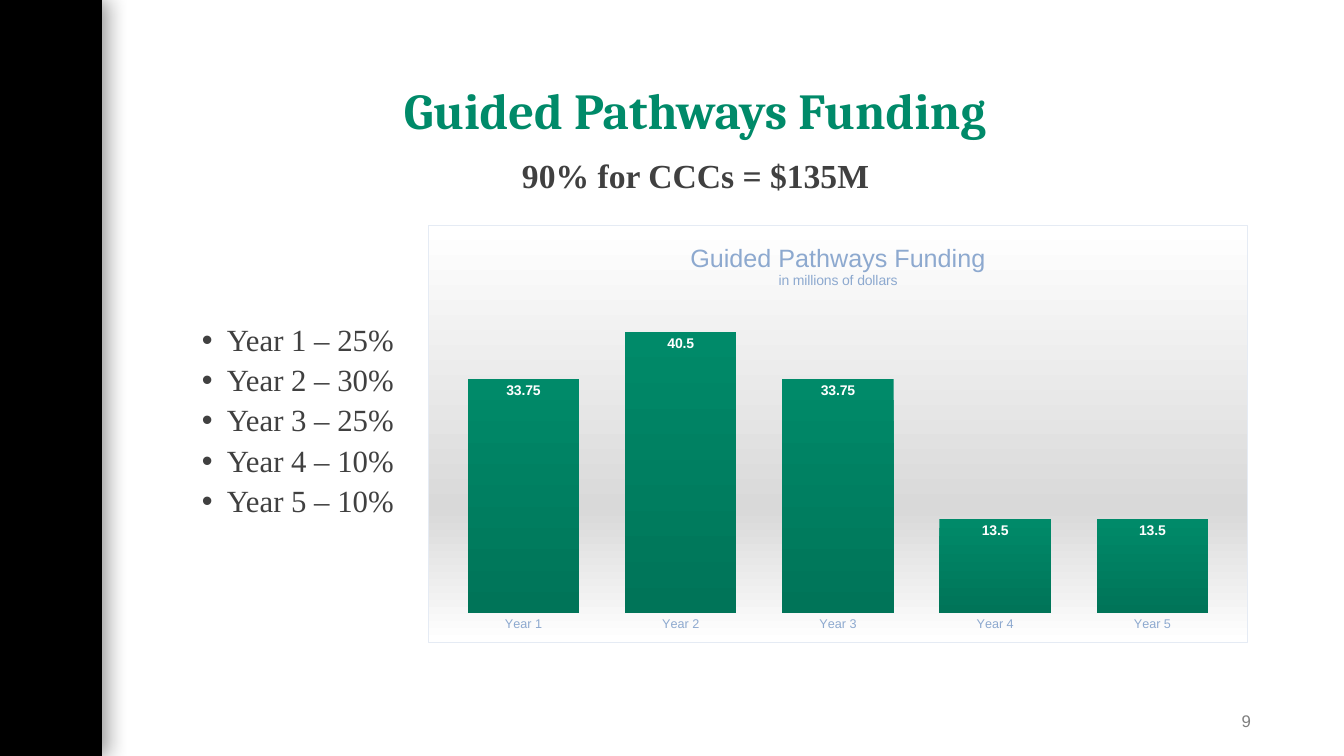
from dataclasses import dataclass
from typing import Any

from lxml.etree import SubElement
from pptx import Presentation
from pptx.chart.data import CategoryChartData
from pptx.dml.color import RGBColor
from pptx.enum.chart import XL_CHART_TYPE as ChartType
from pptx.enum.chart import XL_LABEL_POSITION as LabelPosition
from pptx.enum.chart import XL_TICK_LABEL_POSITION as TickLabels
from pptx.enum.chart import XL_TICK_MARK as TickMark
from pptx.enum.shapes import MSO_SHAPE as Preset
from pptx.enum.text import MSO_ANCHOR as Anchor
from pptx.enum.text import PP_ALIGN as Align
from pptx.oxml import parse_xml
from pptx.oxml.ns import nsdecls, qn
from pptx.util import Emu, Pt

EMU_PER_PX = 914400 / 100.8


def px(length: int) -> Emu:
    return Emu(round(length * EMU_PER_PX))


@dataclass(frozen=True)
class Style:
    font: str
    size: int
    color: str
    bold: bool = False


@dataclass(frozen=True)
class Theme:
    black: str = "000000"
    green: str = "008A69"
    dark_green: str = "007458"
    white: str = "FFFFFF"
    silver: str = "D9D9D9"
    border: str = "E5EBF4"
    title: Style = Style("Cambria", 36, "008A69", True)
    subtitle: Style = Style("Times New Roman", 24, "404040", True)
    bullet: Style = Style("Times New Roman", 22, "404040")
    number: Style = Style("Arial", 12, "7F7F7F")
    chart: Style = Style("Arial", 10, "507BB5")
    chart_title: Style = Style("Arial", 18, "8DA9CF")
    chart_subtitle: Style = Style("Arial", 10, "8DA9CF")
    category: Style = Style("Arial", 9, "8DA9CF")
    label: Style = Style("Arial", 10, "FFFFFF", True)


THEME = Theme()


@dataclass(frozen=True)
class TextBlock:
    left: int
    top: int
    width: int
    height: int
    lines: tuple[str, ...]
    style: Style
    align: Align
    anchor: Anchor = Anchor.TOP
    spacing: float = 0.9
    bulleted: bool = False
    right_inset: int = 10


@dataclass(frozen=True)
class YearShare:
    year: str
    percent: int
    millions: float


SHARES = (
    YearShare("Year 1", 25, 33.75),
    YearShare("Year 2", 30, 40.5),
    YearShare("Year 3", 25, 33.75),
    YearShare("Year 4", 10, 13.5),
    YearShare("Year 5", 10, 13.5),
)

BLOCKS = (
    TextBlock(141, 40, 1108, 146, ("Guided Pathways Funding",), THEME.title,
              Align.CENTER, Anchor.MIDDLE),
    TextBlock(141, 155, 1109, 48, ("90% for CCCs = $135M",), THEME.subtitle, Align.CENTER),
    TextBlock(141, 320, 280, 215, tuple(f"{s.year} – {s.percent}%" for s in SHARES),
              THEME.bullet, Align.LEFT, bulleted=True),
    TextBlock(1150, 701, 101, 40, ("9",), THEME.number, Align.RIGHT, Anchor.MIDDLE,
              spacing=1.0, right_inset=0),
)


def apply_style(font: Any, style: Style) -> None:
    font.name = style.font
    font.size = Pt(style.size)
    font.bold = style.bold
    font.color.rgb = RGBColor.from_string(style.color)


def add_span(para: Any, text: str, style: Style) -> None:
    span = para.add_run()
    span.text = text
    apply_style(span.font, style)


def add_bullet(para: Any) -> None:
    properties = para._p.get_or_add_pPr()
    properties.set("marL", str(px(76)))
    properties.set("indent", str(-px(25)))
    SubElement(properties, qn("a:buFont"), typeface="Arial")
    SubElement(properties, qn("a:buChar"), char="•")


def add_text(page: Any, block: TextBlock) -> None:
    box = page.shapes.add_textbox(px(block.left), px(block.top), px(block.width), px(block.height))
    frame = box.text_frame
    frame.word_wrap = True
    frame.vertical_anchor = block.anchor
    frame.margin_right = px(block.right_inset)
    for index, line in enumerate(block.lines):
        para = frame.add_paragraph() if index else frame.paragraphs[0]
        para.alignment = block.align
        para.line_spacing = block.spacing
        if index:
            para.space_before = Pt(5)
        if block.bulleted:
            add_bullet(para)
        add_span(para, line, block.style)


def add_side_band(page: Any) -> None:
    band = page.shapes.add_shape(Preset.RECTANGLE, 0, 0, px(102), px(756))
    band.fill.solid()
    band.fill.fore_color.rgb = RGBColor.from_string(THEME.black)
    band.line.fill.background()
    band.shadow.inherit = False
    effects = band._element.spPr.find(qn("a:effectLst"))
    shadow = SubElement(effects, qn("a:outerShdw"), blurRad=str(Pt(15)), dist=str(Pt(3)),
                        dir="0", algn="l", rotWithShape="0")
    color = SubElement(shadow, qn("a:srgbClr"), val=THEME.black)
    SubElement(color, qn("a:alpha"), val="40000")


def fill_chart_area(chart: Any) -> None:
    """Give the chart area its three-stop gradient and thin border."""
    stops = "".join(
        f'<a:gs pos="{percent * 1000}"><a:srgbClr val="{color}"/></a:gs>'
        for percent, color in ((0, THEME.white), (68, THEME.silver), (100, THEME.white)))
    area = parse_xml(
        f'<c:spPr {nsdecls("c", "a")}><a:gradFill><a:gsLst>{stops}</a:gsLst>'
        f'<a:lin ang="5400000" scaled="0"/></a:gradFill><a:ln w="{Pt(0.75)}">'
        f'<a:solidFill><a:srgbClr val="{THEME.border}"/></a:solidFill></a:ln></c:spPr>')
    chart.element.find(qn("c:chart")).addnext(area)


def place_plot(chart: Any) -> None:
    """Fix the inner plot area as fractions of the chart."""
    fractions = {"x": 0.02, "y": 0.18, "w": 0.96, "h": 0.75}
    values = "".join(f'<c:{key} val="{value}"/>' for key, value in fractions.items())
    layout = parse_xml(
        f'<c:layout {nsdecls("c")}><c:manualLayout><c:layoutTarget val="inner"/>'
        f'<c:xMode val="edge"/><c:yMode val="edge"/>{values}</c:manualLayout></c:layout>')
    plot_area = chart.element.find(qn("c:chart")).find(qn("c:plotArea"))
    for old in plot_area.findall(qn("c:layout")):
        plot_area.remove(old)
    plot_area.insert(0, layout)


def add_funding_chart(page: Any) -> None:
    data = CategoryChartData()
    data.categories = [share.year for share in SHARES]
    data.add_series("Series 1", [share.millions for share in SHARES])
    chart = page.shapes.add_chart(ChartType.COLUMN_CLUSTERED, px(428), px(225),
                                  px(820), px(418), data).chart
    apply_style(chart.font, THEME.chart)
    chart.has_legend = False
    title = chart.chart_title.text_frame
    add_span(title.paragraphs[0], "Guided Pathways Funding", THEME.chart_title)
    add_span(title.add_paragraph(), "in millions of dollars", THEME.chart_subtitle)

    years = chart.category_axis
    years.major_tick_mark = years.minor_tick_mark = TickMark.NONE
    years.format.line.fill.background()
    apply_style(years.tick_labels.font, THEME.category)
    dollars = chart.value_axis
    dollars.minimum_scale, dollars.maximum_scale = 0, 45
    dollars.has_major_gridlines = False
    dollars.tick_label_position = TickLabels.NONE
    dollars.visible = False

    plot = chart.plots[0]
    plot.gap_width = 41
    plot.vary_by_categories = False
    fill = plot.series[0].format.fill
    fill.gradient()
    fill.gradient_angle = 270
    for stop, color in zip(fill.gradient_stops, (THEME.green, THEME.dark_green)):
        stop.color.rgb = RGBColor.from_string(color)
    labels = plot.series[0].data_labels
    labels.show_value = True
    labels.position = LabelPosition.INSIDE_END
    apply_style(labels.font, THEME.label)
    fill_chart_area(chart)
    place_plot(chart)


def main() -> None:
    deck = Presentation()
    deck.slide_width, deck.slide_height = px(1344), px(756)
    page = deck.slides.add_slide(deck.slide_layouts[6])
    add_side_band(page)
    for block in BLOCKS:
        add_text(page, block)
    add_funding_chart(page)
    deck.save("out.pptx")


if __name__ == "__main__":
    main()
